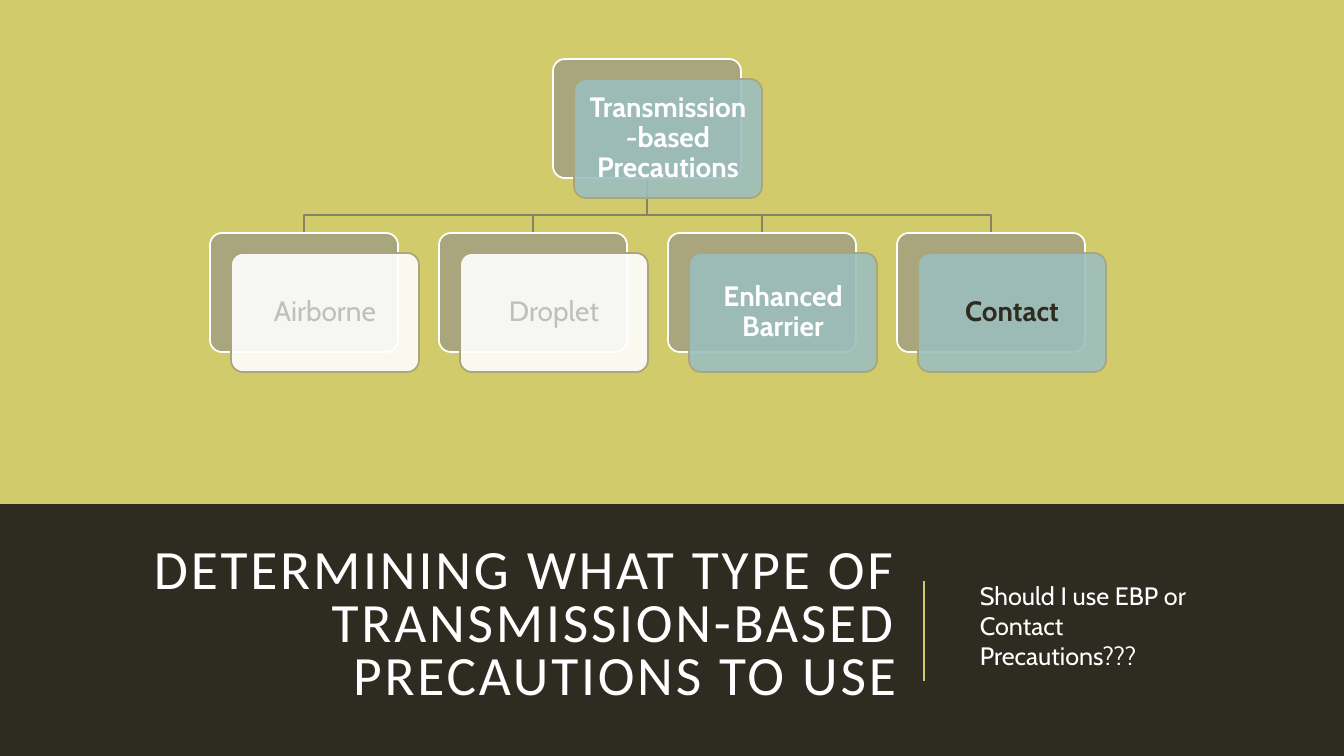
from pptx import Presentation
from pptx.dml.color import RGBColor
from pptx.enum.shapes import MSO_CONNECTOR, MSO_SHAPE
from pptx.enum.text import MSO_ANCHOR, MSO_AUTO_SIZE, PP_ALIGN
from pptx.oxml.ns import qn
from pptx.util import Pt
from lxml.etree import SubElement

THEME = {
    "dark": "2E2B21", "lime": "D2CB6C", "olive": "A9A57C", "link": "878463",
    "teal": "9CBEBD", "white": "FFFFFF", "gray": "BFBFBF",
    "head_font": "Calibri", "body_font": "Cabin",
    "title": 39.6, "card": 20, "note": 18,
}
SCALE = 914400 / 100.8


def px(*lengths):
    return [round(n * SCALE) for n in lengths]


def style_text(tf, text, font, size, color, align, bold=False):
    tf.text = text
    tf.word_wrap = True
    p = tf.paragraphs[0]
    p.alignment = align
    r = p.runs[0]
    r.font.name, r.font.size, r.font.bold = THEME[font], Pt(THEME[size]), bold
    r.font.color.rgb = RGBColor.from_string(THEME[color])
    return p


prs = Presentation()
prs.slide_width, prs.slide_height = px(1344, 756)
s = prs.slides.add_slide(prs.slide_layouts[5])

# Background, upper panel and divider
s.background.fill.solid()
s.background.fill.fore_color.rgb = RGBColor.from_string(THEME["dark"])
panel = s.shapes.add_shape(MSO_SHAPE.RECTANGLE, *px(0, 0, 1344, 504))
panel.shadow.inherit = False
panel.fill.solid()
panel.fill.fore_color.rgb = RGBColor.from_string(THEME["lime"])
panel.line.fill.background()
divider = s.shapes.add_connector(MSO_CONNECTOR.STRAIGHT, *px(924, 681, 924, 581))
divider.line.color.rgb = RGBColor.from_string(THEME["lime"])
divider.line.width = Pt(1.5)
SubElement(divider._element.spPr, qn("a:effectLst"))

# Title
title = s.shapes.title
title.left, title.top, title.width, title.height = px(50, 546, 857, 161)
tf = title.text_frame
p = style_text(tf, "DETERMINING WHAT TYPE OF TRANSMISSION-BASED PRECAUTIONS TO USE",
               "head_font", "title", "white", PP_ALIGN.RIGHT)
p.line_spacing = 0.8
p.runs[0]._r.get_or_add_rPr().set("spc", "200")
tf.vertical_anchor = MSO_ANCHOR.MIDDLE
tf.auto_size = MSO_AUTO_SIZE.NONE

# Hierarchy: one root over a row of four equally spaced cards
CARD_W, CARD_H = 188, 119
ROOT_X, ROOT_Y = 553, 59
ROW_X, ROW_Y, STEP = 210, 233, 229
cards = [(ROOT_X, ROOT_Y, "Transmission-based Precautions", "teal", "white", True)]
row = [
    ("Airborne", "white", "gray", False),
    ("Droplet", "white", "gray", False),
    ("Enhanced Barrier", "teal", "white", True),
    ("Contact", "teal", "dark", True),
]
cards += [(ROW_X + i * STEP, ROW_Y, *card) for i, card in enumerate(row)]

# Elbow links from the root to each card
start_x, bend_y = ROOT_X + CARD_W // 2, 215
for x, y, *_ in cards[1:]:
    end_x = x + CARD_W // 2
    builder = s.shapes.build_freeform(start_x, ROOT_Y + CARD_H, scale=SCALE)
    builder.add_line_segments([(start_x, bend_y), (end_x, bend_y), (end_x, y)], close=False)
    link = builder.convert_to_shape()
    link.shadow.inherit = False
    link.fill.background()
    link.line.color.rgb = RGBColor.from_string(THEME["link"])
    link.line.width = Pt(1.25)

# Cards: a solid back plate and a translucent labelled front plate
for x, y, label, face, ink, bold in cards:
    for dx, dy, fill, edge in ((0, 0, "olive", "white"), (21, 20, face, "olive")):
        sp = s.shapes.add_shape(MSO_SHAPE.ROUNDED_RECTANGLE, *px(x + dx, y + dy, CARD_W, CARD_H))
        sp.adjustments[0] = 0.1
        sp.shadow.inherit = False
        sp.fill.solid()
        sp.fill.fore_color.rgb = RGBColor.from_string(THEME[fill])
        sp.line.color.rgb = RGBColor.from_string(THEME[edge])
        sp.line.width = Pt(1.25)
    color = sp._element.spPr.find(qn("a:solidFill")).find(qn("a:srgbClr"))
    SubElement(color, qn("a:alpha")).set("val", "90000")
    tf = sp.text_frame
    tf.margin_left, tf.margin_top, tf.margin_right, tf.margin_bottom = px(8, 8, 8, 8)
    tf.vertical_anchor = MSO_ANCHOR.MIDDLE
    p = style_text(tf, label, "body_font", "card", ink, PP_ALIGN.CENTER, bold)
    p.line_spacing = 0.9

# Side question
note = s.shapes.add_textbox(*px(970, 575, 230, 102))
style_text(note.text_frame, "Should I use EBP or Contact Precautions???",
           "body_font", "note", "white", PP_ALIGN.LEFT)

prs.save("out.pptx")
